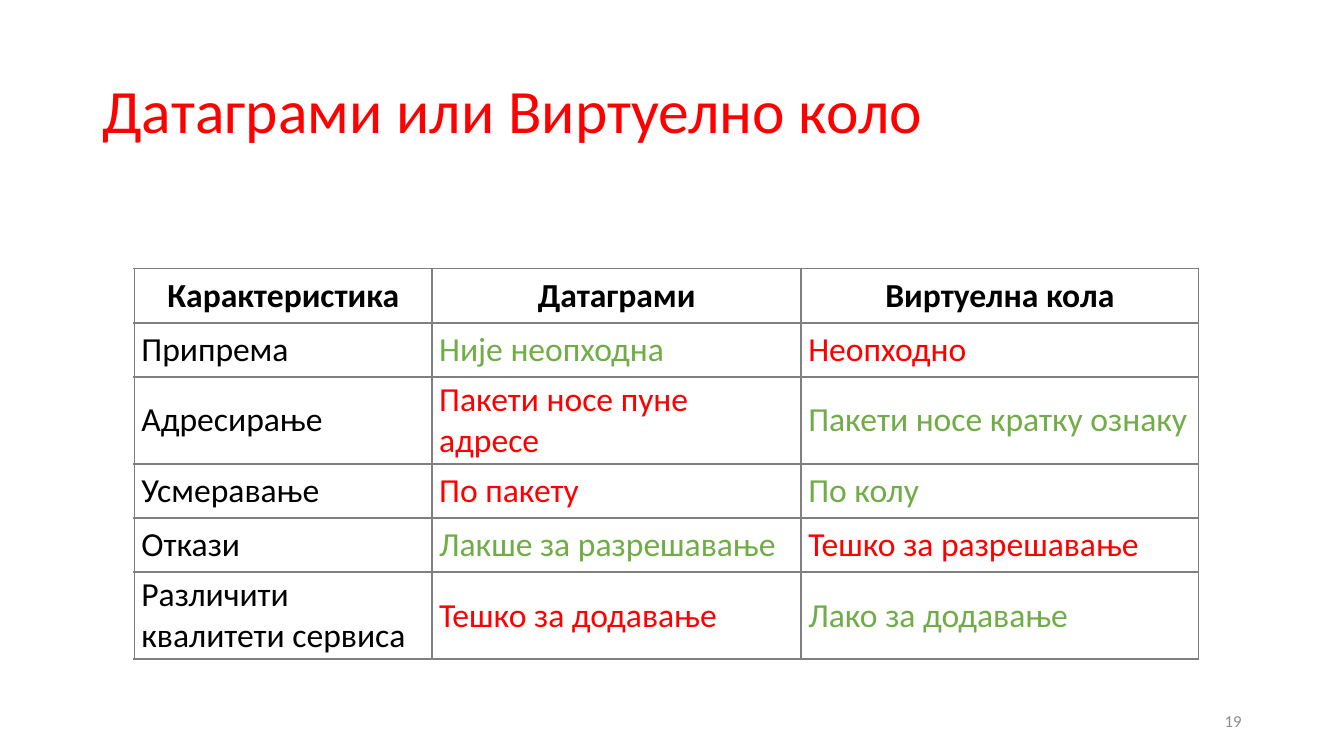
from lxml import etree
from pptx import Presentation
from pptx import util as u
from pptx.dml.color import RGBColor
from pptx.enum import text
from pptx.oxml import ns

BLACK = RGBColor(0x00, 0x00, 0x00)
RED = RGBColor(0xFF, 0x00, 0x00)
GREEN = RGBColor(0x70, 0xAD, 0x47)
GRAY = RGBColor(0x8C, 0x8C, 0x8C)
BORDER = RGBColor(0x80, 0x80, 0x80)


def add_run(paragraph, words, size, color, bold=False):
    run = paragraph.add_run()
    run.text = words
    run.font.name = "Calibri"
    run.font.size = u.Pt(size)
    run.font.bold = bold
    run.font.color.rgb = color


def add_borders(cell):
    properties = cell._tc.get_or_add_tcPr()
    for position, side in enumerate(("lnL", "lnR", "lnT", "lnB")):
        line = etree.Element(ns.qn(f"a:{side}"), w=str(u.Pt(1.5)))
        fill = etree.SubElement(line, ns.qn("a:solidFill"))
        etree.SubElement(fill, ns.qn("a:srgbClr"), val=str(BORDER))
        properties.insert(position, line)


presentation = Presentation()
presentation.slide_width = u.Pt(960)
presentation.slide_height = u.Pt(540)
slide = presentation.slides.add_slide(presentation.slide_layouts[6])

# Title and slide number
text_boxes = [
    ("Датаграми или Виртуелно коло", (66, 28.75, 828, 104.4), 44, RED, text.PP_ALIGN.LEFT, 0.9),
    ("19", (678, 500.5, 216, 28.75), 12, GRAY, text.PP_ALIGN.RIGHT, 1.0),
]
for words, place, size, color, alignment, spacing in text_boxes:
    box = slide.shapes.add_textbox(*[u.Pt(length) for length in place])
    box.text_frame.word_wrap = True
    box.text_frame.vertical_anchor = text.MSO_ANCHOR.MIDDLE
    paragraph = box.text_frame.paragraphs[0]
    paragraph.alignment = alignment
    paragraph.line_spacing = spacing
    add_run(paragraph, words, size, color)

# Comparison table: each row ends with the colours of its two values
comparison = [
    ("Карактеристика", "Датаграми", "Виртуелна кола", BLACK, BLACK),
    ("Припрема", "Није неопходна", "Неопходно", GREEN, RED),
    ("Адресирање", "Пакети носе пуне адресе", "Пакети носе кратку ознаку", RED, GREEN),
    ("Усмеравање", "По пакету", "По колу", RED, GREEN),
    ("Откази", "Лакше за разрешавање", "Тешко за разрешавање", GREEN, RED),
    ("Различити квалитети сервиса", "Тешко за додавање", "Лако за додавање", RED, GREEN),
]
column_widths = [212.7, 263.7, 283.7]
row_heights = [38.7, 38.7, 62.2, 38.7, 38.7, 62.2]
table = slide.shapes.add_table(
    len(row_heights), len(column_widths), u.Pt(96), u.Pt(191.8),
    u.Pt(sum(column_widths)), u.Pt(sum(row_heights)),
).table
table.horz_banding = False
for column, width in zip(table.columns, column_widths):
    column.width = u.Pt(width)
for row, height in zip(table.rows, row_heights):
    row.height = u.Pt(height)

for row_index, (*entries, first_color, second_color) in enumerate(comparison):
    is_header = row_index == 0
    for column_index, color in enumerate((BLACK, first_color, second_color)):
        cell = table.cell(row_index, column_index)
        cell.fill.background()
        cell.vertical_anchor = text.MSO_ANCHOR.MIDDLE
        cell.margin_left = cell.margin_right = u.Pt(5)
        cell.margin_top = cell.margin_bottom = u.Pt(2)
        add_borders(cell)
        paragraph = cell.text_frame.paragraphs[0]
        paragraph.alignment = text.PP_ALIGN.CENTER if is_header else text.PP_ALIGN.LEFT
        add_run(paragraph, entries[column_index], 24, color, is_header)

presentation.save("out.pptx")
